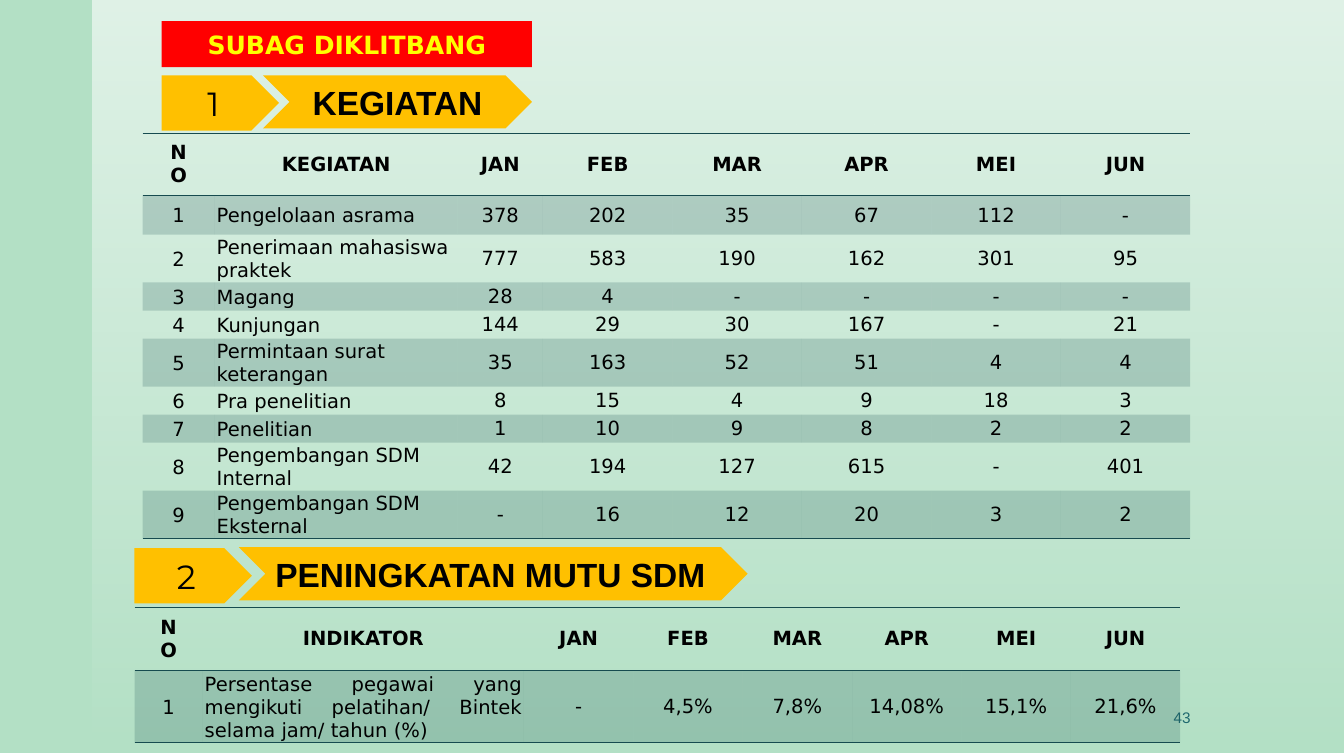
from lxml import etree
from pptx import Presentation, util as u
from pptx.dml.color import RGBColor
from pptx.enum import shapes, text
from pptx.oxml import parse_xml
from pptx.oxml.ns import qn

NS = 'xmlns:a="http://schemas.openxmlformats.org/drawingml/2006/main"'
NO_STYLE = "{2D5ABB26-0587-4C30-8999-92F81FD0307C}"
KIND = shapes.MSO_SHAPE
LEFT, MID, RIGHT, FULL = (text.PP_ALIGN.LEFT, text.PP_ALIGN.CENTER,
                          text.PP_ALIGN.RIGHT, text.PP_ALIGN.JUSTIFY)
ANCHOR = text.MSO_ANCHOR.MIDDLE
TEAL, GOLD, BLACK = "164B4F", "FFC000", "000000"
MONTHS = ["JAN", "FEB", "MAR", "APR", "MEI", "JUN"]

TITLE = {"size": 18, "name": "DejaVu Sans", "bold": True}
HEAD = {"size": 14, "name": "DejaVu Sans", "bold": True}
BODY = {"size": 14, "name": "DejaVu Sans", "bold": False}
DIGIT = {"size": 24, "name": "Montserrat", "bold": False}
LABEL = {"size": 24, "name": "Arial", "bold": True}
PAGE = {"size": 11, "name": "Arial", "bold": False}

TASKS = [
    ["1", "Pengelolaan asrama", "378", "202", "35", "67", "112", "-"],
    ["2", "Penerimaan mahasiswa praktek", "777", "583", "190", "162", "301", "95"],
    ["3", "Magang", "28", "4", "-", "-", "-", "-"],
    ["4", "Kunjungan", "144", "29", "30", "167", "-", "21"],
    ["5", "Permintaan surat keterangan", "35", "163", "52", "51", "4", "4"],
    ["6", "Pra penelitian", "8", "15", "4", "9", "18", "3"],
    ["7", "Penelitian", "1", "10", "9", "8", "2", "2"],
    ["8", "Pengembangan SDM Internal", "42", "194", "127", "615", "-", "401"],
    ["9", "Pengembangan SDM Eksternal", "-", "16", "12", "20", "3", "2"],
]
STAFF = [["1", "Persentase pegawai yang mengikuti pelatihan/ Bintek selama jam/ tahun (%)",
          "-", "4,5%", "7,8%", "14,08%", "15,1%", "21,6%"]]


def color(code):
    return RGBColor.from_string(code)


def paint(fill, code):
    fill.solid()
    fill.fore_color.rgb = color(code)


def assign(item, values):
    for key, value in values.items():
        setattr(item, key, value)


def write(frame, words, font, code=BLACK, align=MID):
    para = frame.paragraphs[0]
    para.alignment = align
    run = para.add_run()
    run.text = words
    assign(run.font, {**font, "size": u.Pt(font["size"])})
    run.font.color.rgb = color(code)


def place(item, *box):
    names = ("left", "top", "width", "height")
    assign(item, dict(zip(names, map(u.Inches, box))))


def add_shape(parent, kind, box, code):
    shape = parent.add_shape(kind, *map(u.Inches, box))
    shape.shadow.inherit = False
    shape.line.fill.background()
    paint(shape.fill, code)
    return shape


def add_panel(slide):
    """Put the fading white panel behind everything else."""
    panel = add_shape(slide.shapes, KIND.RECTANGLE, (0.92, 0, 12.47, 7.5), "FFFFFF")
    stops = "".join(
        f'<a:gs pos="{pos}"><a:srgbClr val="FFFFFF"><a:alpha val="{alpha}"/></a:srgbClr></a:gs>'
        for pos, alpha in ((0, 60000), (100000, 0)))
    fade = parse_xml(f'<a:gradFill {NS} rotWithShape="1"><a:gsLst>{stops}</a:gsLst>'
                     '<a:lin ang="5400000" scaled="0"/></a:gradFill>')
    props = panel._element.spPr
    props.replace(props.find(qn("a:solidFill")), fade)
    slide.shapes._spTree.insert(2, panel._element)


def add_title(slide, words):
    title = slide.shapes.title
    place(title, 1.61, 0.21, 3.69, 0.46)
    props = title._element.spPr
    props.append(parse_xml(f'<a:prstGeom {NS} prst="roundRect"><a:avLst/></a:prstGeom>'))
    paint(title.fill, "FF0000")
    frame = title.text_frame
    assign(frame, {"auto_size": text.MSO_AUTO_SIZE.NONE, "word_wrap": True,
                   "vertical_anchor": ANCHOR})
    write(frame, words, TITLE, "FFFF00")


def add_banner(slide, digit, words, plate, arrow, align=MID):
    """Group a numbered plate with the arrow that names the section."""
    group = slide.shapes.add_group_shape()
    for kind, box, label, font, side in (
            (KIND.PENTAGON, plate, digit, DIGIT, MID),
            (KIND.CHEVRON, arrow, words, LABEL, align)):
        shape = add_shape(group.shapes, kind, box, GOLD)
        shape.text_frame.vertical_anchor = ANCHOR
        write(shape.text_frame, label, font, align=side)


def rule(cell, side):
    """Draw a thin border on one side of a cell."""
    cell._tc.get_or_add_tcPr().append(parse_xml(
        f'<a:{side} {NS} w="12700"><a:solidFill><a:srgbClr val="{TEAL}"/>'
        f'</a:solidFill></a:{side}>'))


def shade(cell):
    paint(cell.fill, TEAL)
    tint = cell._tc.tcPr.find(qn("a:solidFill"))[0]
    etree.SubElement(tint, qn("a:alpha")).set("val", "20000")


def margins(row, col):
    if row == 0:
        sides = (0.2, 0.08, 0.2, 0.08)
    else:
        sides = (0.02, 0.02, 0.02, 0) if col < 2 else (0.01, 0.01, 0.01, 0)
    names = ("margin_left", "margin_top", "margin_right", "margin_bottom")
    return dict(zip(names, map(u.Inches, sides)))


def add_grid(slide, spot, heading, rows, widths, heights, align):
    rows = [["NO", heading, *MONTHS], *rows]
    box = (*spot, sum(widths), sum(heights))
    grid = slide.shapes.add_table(len(rows), len(widths), *map(u.Inches, box)).table
    grid.horz_banding = False
    grid._tbl.tblPr.find(qn("a:tableStyleId")).text = NO_STYLE
    for col, width in zip(grid.columns, widths):
        col.width = u.Inches(width)
    for line, height in zip(grid.rows, heights):
        line.height = u.Inches(height)
    for r, row in enumerate(rows):
        for c, words in enumerate(row):
            cell = grid.cell(r, c)
            assign(cell, {"vertical_anchor": ANCHOR, **margins(r, c)})
            if r == 0:
                rule(cell, "lnT")
            if r in (0, len(rows) - 1):
                rule(cell, "lnB")
            if r % 2:
                shade(cell)
            else:
                cell.fill.background()
            write(cell.text_frame, words, BODY if r else HEAD,
                  align=align if r and c == 1 else MID)


def add_page(slide, number):
    box = slide.shapes.add_textbox(*map(u.Inches, (8.84, 6.95, 3.12, 0.4)))
    assign(box.text_frame, {"word_wrap": True, "vertical_anchor": ANCHOR})
    write(box.text_frame, number, PAGE, "1F696F", RIGHT)


def main():
    deck = Presentation()
    assign(deck, {"slide_width": u.Inches(13.39), "slide_height": u.Inches(7.5)})
    slide = deck.slides.add_slide(deck.slide_layouts[5])
    paint(slide.background.fill, "B3E0C5")
    add_panel(slide)
    add_title(slide, "SUBAG DIKLITBANG")
    tall, low = 0.47, 0.28
    add_grid(slide, (1.42, 1.33), "KEGIATAN", TASKS,
             [0.72, 2.42, 0.85] + [1.29] * 5,
             [0.61, 0.39, tall, low, low, tall, low, low, tall, tall], LEFT)
    add_page(slide, "43")
    add_grid(slide, (1.34, 6.05), "INDIKATOR", STAFF,
             [0.68, 3.2] + [1.09] * 6, [0.61, 0.7], FULL)
    add_banner(slide, "1", "KEGIATAN", (1.61, 0.75, 1.17, 0.55), (2.62, 0.75, 2.68, 0.53))
    add_banner(slide, "2", "PENINGKATAN MUTU SDM", (1.34, 5.46, 1.17, 0.55),
               (2.38, 5.45, 5.07, 0.53), LEFT)
    deck.save("out.pptx")


if __name__ == "__main__":
    main()
